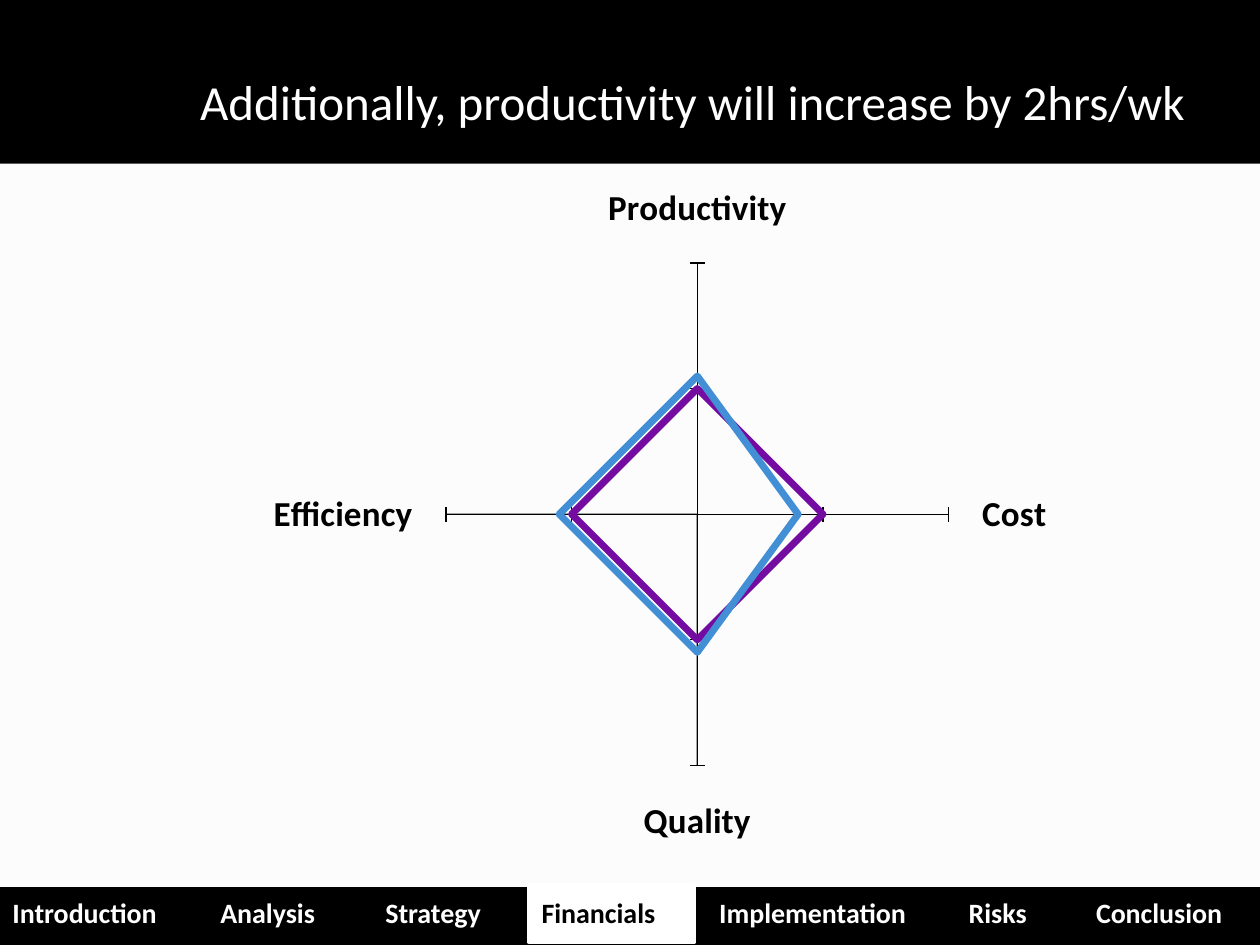
from lxml import etree
from pptx import Presentation
from pptx.chart.data import CategoryChartData
from pptx.dml.color import RGBColor
from pptx.enum.chart import XL_CHART_TYPE, XL_TICK_LABEL_POSITION, XL_TICK_MARK
from pptx.enum.shapes import MSO_SHAPE
from pptx.enum.text import MSO_ANCHOR, PP_ALIGN
from pptx.oxml.ns import qn
from pptx.util import Inches, Pt


def paint(color, hue):
    color.rgb = RGBColor.from_string(hue)


def write(text, box, size, hue, bold=False):
    """Add a text box and return its frame."""
    frame = slide.shapes.add_textbox(*map(Inches, box)).text_frame
    frame.text = text
    font = frame.paragraphs[0].font
    font.name, font.size, font.bold = "Calibri", Pt(size), bold
    paint(font.color, hue)
    return frame


deck = Presentation()
deck.slide_width, deck.slide_height = Inches(10), Inches(7.5)
slide = deck.slides.add_slide(deck.slide_layouts[6])
back = slide.background.fill
back.solid()
paint(back.fore_color, "FCFCFC")

# Header, footer and active tab
bars = [
    (0, 0, 10, 1.3, "000000"),
    (0, 7.04, 10, 0.46, "000000"),
    (4.2, 7.02, 1.31, 0.46, "FFFFFF"),
]
for *box, hue in bars:
    bar = slide.shapes.add_shape(MSO_SHAPE.RECTANGLE, *map(Inches, box))
    bar.shadow.inherit = False
    bar.fill.solid()
    paint(bar.fill.fore_color, hue)
    bar.line.fill.background()
paint(bar.line.color, "FFFFFF")
bar.line.width = Pt(2)

# Footer tabs
tabs = [
    ("Introduction", 0, 1.37),
    ("Analysis", 1.65, 0.98),
    ("Strategy", 2.96, 0.98),
    ("Financials", 4.2, 1.12),
    ("Implementation", 5.61, 1.7),
    ("Risks", 7.59, 0.67),
    ("Conclusion", 8.6, 1.22),
]
for name, left, width in tabs:
    hue = "000000" if name == "Financials" else "FFFFFF"
    frame = write(name, (left, 7.06, width, 0.37), 16, hue, True)
    frame.word_wrap = False

title = write("Additionally, productivity will increase by 2hrs/wk",
              (0.5, 0.3, 9, 1), 28, "FFFFFF")
title.word_wrap = True
title.vertical_anchor = MSO_ANCHOR.MIDDLE
title.paragraphs[0].alignment = PP_ALIGN.RIGHT

# Radar chart
data = CategoryChartData()
data.categories = ["Productivity", "Cost", "Quality", "Efficiency"]
data.add_series("Series 1", (91, 91, 91, 91))
data.add_series("Series 2", (100, 73, 100, 100))
chart = slide.shapes.add_chart(
    XL_CHART_TYPE.RADAR, Inches(0.5), Inches(1.3), Inches(9.5), Inches(5.62), data
).chart
chart.has_legend = False
chart.has_title = False
chart.font.name, chart.font.size = "Calibri", Pt(20)
paint(chart.font.color, "000000")
chart.plots[0].vary_by_categories = False
for series, hue in zip(chart.plots[0].series, ("740CA2", "428FD6")):
    series.smooth = False
    series.format.line.width = Pt(4)
    paint(series.format.line.color, hue)

chart.category_axis.tick_labels.font.bold = True
axis = chart.value_axis
axis.minimum_scale, axis.maximum_scale, axis.major_unit = 0, 182, 91
axis.has_major_gridlines = False
axis.major_tick_mark = XL_TICK_MARK.OUTSIDE
axis.tick_label_position = XL_TICK_LABEL_POSITION.NONE
axis.format.line.width = Pt(0.75)
paint(axis.format.line.color, "000000")

# Fixed plot area
area = chart.element.find(".//" + qn("c:plotArea"))
for old in area.findall(qn("c:layout")):
    area.remove(old)
layout = etree.Element(qn("c:layout"))
area.insert(0, layout)
manual = etree.SubElement(layout, qn("c:manualLayout"))
rules = [("layoutTarget", "inner"), ("xMode", "edge"), ("yMode", "edge"),
         ("x", "0.32"), ("y", "0.14"), ("w", "0.42"), ("h", "0.71")]
for tag, value in rules:
    etree.SubElement(manual, qn("c:" + tag)).set("val", value)

deck.save("out.pptx")
